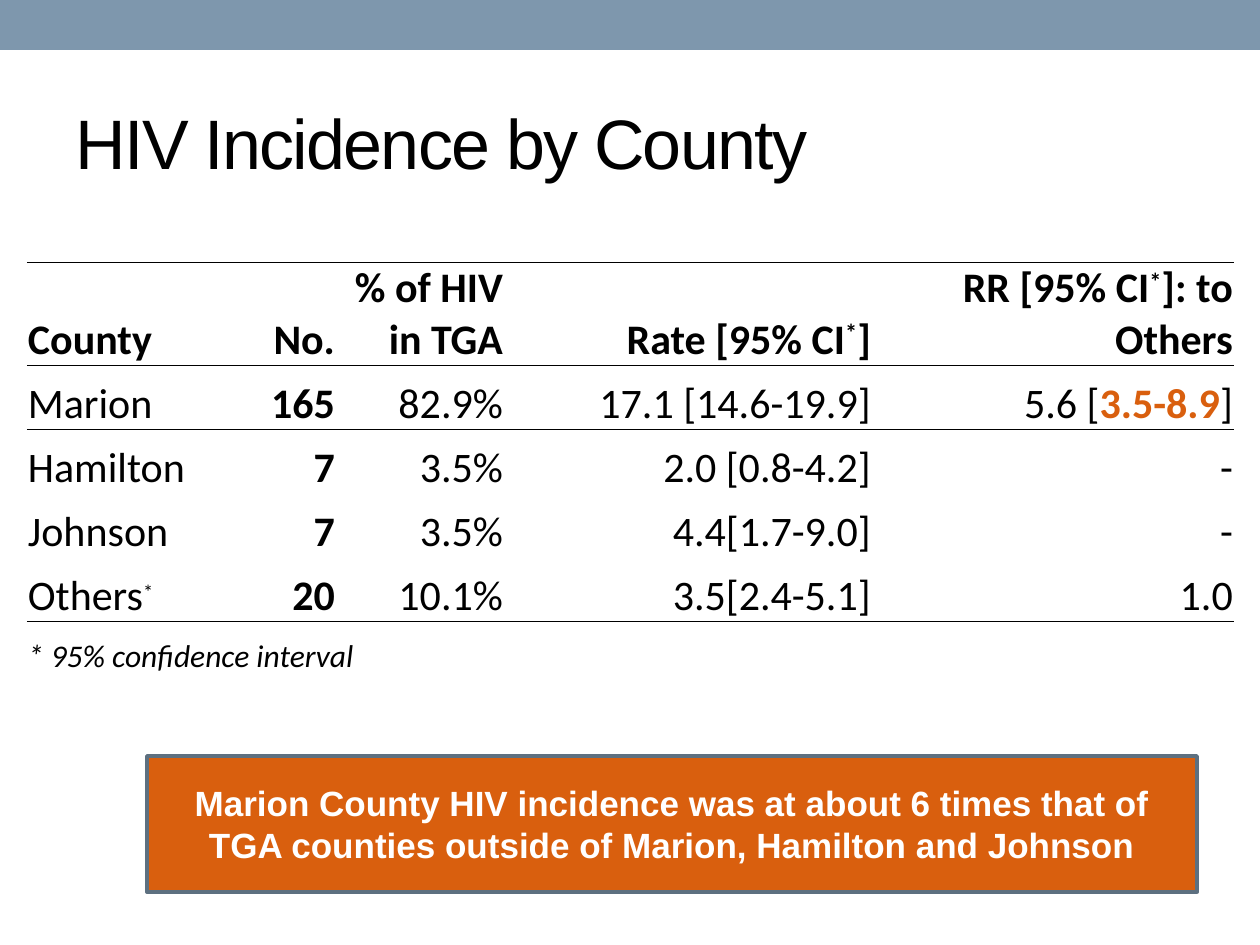
from lxml.etree import SubElement
from pptx import Presentation
from pptx.dml.color import RGBColor
from pptx.enum.shapes import MSO_SHAPE
from pptx.enum.text import MSO_ANCHOR, MSO_AUTO_SIZE, PP_ALIGN
from pptx.oxml.ns import qn
from pptx.util import Emu, Pt

EMU_PER_PX = 914400 / 126
COLORS = {"ink": "000000", "paper": "FFFFFF", "band": "7E97AD",
          "accent": "D95F0E", "edge": "5D7080"}
NO_GRID_STYLE = "{2D5ABB26-0587-4C30-8999-92F81FD0307C}"


def px(length):
    return Emu(round(length * EMU_PER_PX))


def rgb(name):
    return RGBColor.from_string(COLORS[name])


def add_run(paragraph, text, font="Calibri", size=24, color="ink", bold=False,
            italic=False, raised=False, spacing=None):
    run = paragraph.add_run()
    run.text = text
    run.font.name, run.font.size = font, Pt(size)
    run.font.bold, run.font.italic = bold, italic
    run.font.color.rgb = rgb(color)
    properties = run._r.get_or_add_rPr()
    if raised:
        properties.set("baseline", "30000")
    if spacing is not None:
        properties.set("spc", str(spacing))


class SlideBuilder:
    heading_font = "Arial"

    def __init__(self, slide):
        self.slide = slide

    def title(self, text, left, top, width, height):
        heading = self.slide.shapes.title
        heading.left, heading.top = px(left), px(top)
        heading.width, heading.height = px(width), px(height)
        frame = heading.text_frame
        frame.auto_size = MSO_AUTO_SIZE.NONE
        frame.vertical_anchor = MSO_ANCHOR.MIDDLE
        frame.paragraphs[0].alignment = PP_ALIGN.LEFT
        add_run(frame.paragraphs[0], text, font=self.heading_font, size=40,
                spacing=-100)

    def box(self, left, top, width, height, fill, edge=None, text=None):
        panel = self.slide.shapes.add_shape(
            MSO_SHAPE.RECTANGLE, px(left), px(top), px(width), px(height))
        panel.shadow.inherit = False
        panel.fill.solid()
        panel.fill.fore_color.rgb = rgb(fill)
        if edge:
            panel.line.color.rgb = rgb(edge)
            panel.line.width = Pt(2.08)
        else:
            panel.line.fill.background()
        if text:
            frame = panel.text_frame
            frame.word_wrap = True
            frame.vertical_anchor = MSO_ANCHOR.MIDDLE
            frame.paragraphs[0].alignment = PP_ALIGN.CENTER
            add_run(frame.paragraphs[0], text, font=self.heading_font, size=20,
                    color="paper", bold=True)

    def table(self, left, top, widths, heights):
        grid = self.slide.shapes.add_table(
            len(heights), len(widths), px(left), px(top),
            px(sum(widths)), px(sum(heights))).table
        grid._tbl.tblPr.find(qn("a:tableStyleId")).text = NO_GRID_STYLE
        grid.first_row = grid.horz_banding = False
        for column, width in zip(grid.columns, widths):
            column.width = px(width)
        for row, height in zip(grid.rows, heights):
            row.height = px(height)
        return grid

    def cell(self, cell, runs, align, sides):
        cell.margin_left = cell.margin_right = cell.margin_top = px(1)
        cell.margin_bottom = 0
        cell.vertical_anchor = MSO_ANCHOR.BOTTOM
        for side in sides:
            self.rule(cell, side)
        cell.fill.background()
        paragraph = cell.text_frame.paragraphs[0]
        paragraph.alignment = align
        for text, style in runs:
            add_run(paragraph, text, **style)

    def rule(self, cell, side):
        line = SubElement(cell._tc.get_or_add_tcPr(), qn(f"a:{side}"), w=str(Pt(0.5)))
        SubElement(SubElement(line, qn("a:solidFill")), qn("a:srgbClr"),
                   val=COLORS["ink"])


STAR = ("*", {"raised": True})
BOLD_STAR = ("*", {"raised": True, "bold": True})
SMALL_STAR = ("*", {"raised": True, "size": 20})
HIGHLIGHT = ("3.5-8.9", {"color": "accent", "bold": True})

# Each cell is a string or a list of strings and styled runs
ROWS = [
    ["County", "No.", "% of HIV in TGA", ["Rate [95% CI", BOLD_STAR, "]"],
     ["RR [95% CI", BOLD_STAR, "]: to Others"]],
    ["Marion", "165", "82.9%", "17.1 [14.6-19.9]", ["5.6 [", HIGHLIGHT, "]"]],
    ["Hamilton", "7", "3.5%", "2.0 [0.8-4.2]", "-"],
    ["Johnson", "7", "3.5%", "4.4[1.7-9.0]", "-"],
    [["Others", SMALL_STAR], "20", "10.1%", "3.5[2.4-5.1]", "1.0"],
    [[("* 95% confidence interval", {"size": 18, "italic": True})]],
]
RULES = {0: ["lnT", "lnB"], 1: ["lnT"], 4: ["lnB"], 5: ["lnT"]}


def main():
    deck = Presentation()
    deck.slide_width, deck.slide_height = px(1260), px(945)
    builder = SlideBuilder(deck.slides.add_slide(deck.slide_layouts[5]))

    # Top band and title
    builder.box(0, 0, 1260, 50, "band")
    builder.title("HIV Incidence by County", 63, 73, 1134, 136)

    # Key finding
    builder.box(147, 756, 1050, 136, "accent", edge="edge",
                text="Marion County HIV incidence was at about 6 times that of "
                     "TGA counties outside of Marion, Hamilton and Johnson")

    # Incidence table, with the footnote across its last row
    incidence = builder.table(27, 262, [204, 105, 168, 368, 362],
                              [95] + [64] * 4 + [54])
    incidence.cell(5, 0).merge(incidence.cell(5, 4))
    for r, row in enumerate(ROWS):
        for c, content in enumerate(row):
            parts = [content] if isinstance(content, str) else content
            bold = r == 0 or c == 1
            runs = [(part, {"bold": bold}) if isinstance(part, str) else part
                    for part in parts]
            builder.cell(incidence.cell(r, c), runs,
                         PP_ALIGN.RIGHT if c else PP_ALIGN.LEFT, RULES.get(r, []))

    deck.save("out.pptx")


if __name__ == "__main__":
    main()
